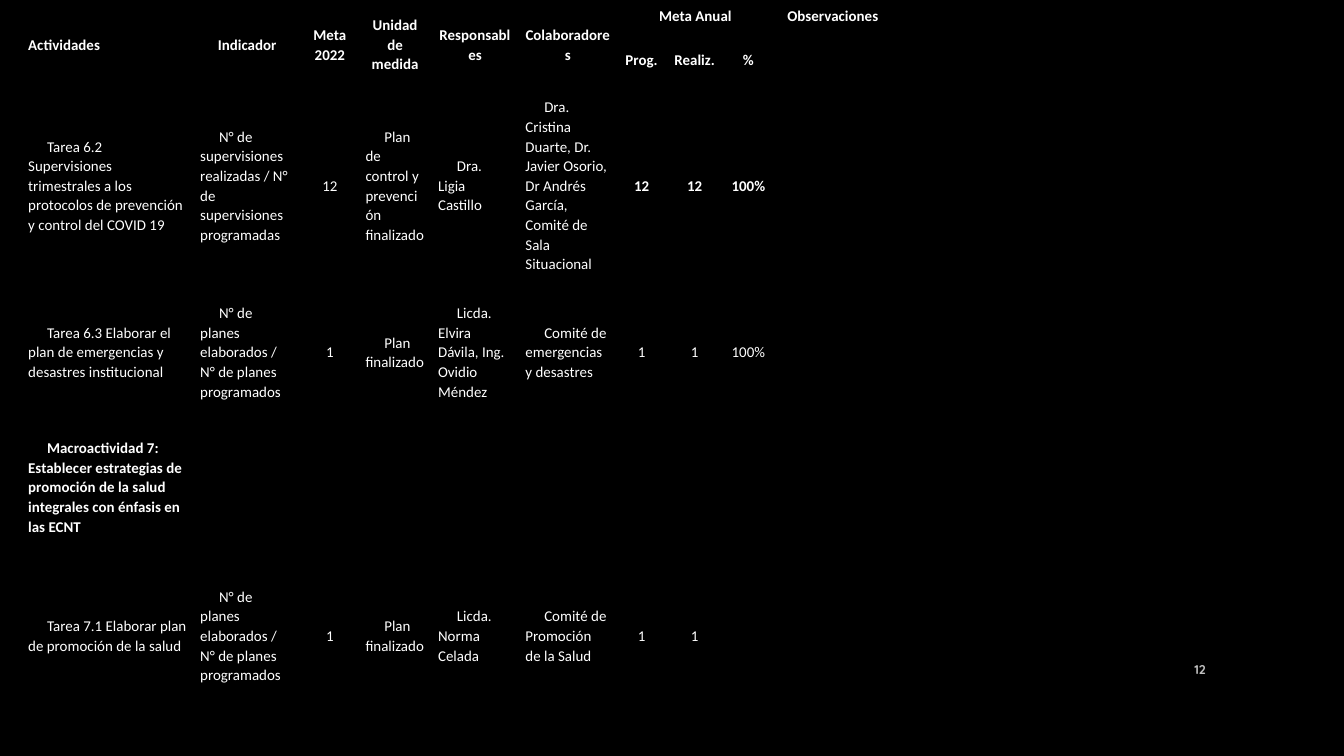
import pptx
import pptx.util
import pptx.dml.color
import pptx.enum.text
import pptx.oxml
import pptx.oxml.ns

Inches = pptx.util.Inches
Pt = pptx.util.Pt
Align = pptx.enum.text.PP_ALIGN
Anchor = pptx.enum.text.MSO_ANCHOR
BLACK = pptx.dml.color.RGBColor(0, 0, 0)
WHITE = pptx.dml.color.RGBColor(255, 255, 255)
GRAY = pptx.dml.color.RGBColor(191, 191, 191)

COLS = [1.28, 0.8, 0.43, 0.54, 0.65, 0.73, 0.37, 0.42, 0.38, 3.09]
ROWS = [0.23, 0.21, 1.44, 1.04, 0.97, 1.24]
PLANS = "N° de planes elaborados / N° de planes programados"
DATA = [
    ["Actividades", "Indicador", "Meta 2022", "Unidad de medida", "Responsables",
     "Colaboradores", "Meta Anual", "", "", "Observaciones"],
    ["", "", "", "", "", "", "Prog.", "Realiz.", "%", ""],
    ["Tarea 6.2 Supervisiones trimestrales a los protocolos de prevención y control del COVID 19",
     "N° de supervisiones realizadas / N° de supervisiones programadas", "12",
     "Plan de control y prevención finalizado", "Dra. Ligia Castillo",
     "Dra. Cristina Duarte, Dr. Javier Osorio, Dr Andrés García, Comité de Sala Situacional",
     "12", "12", "100%", ""],
    ["Tarea 6.3 Elaborar el plan de emergencias y desastres institucional", PLANS, "1",
     "Plan finalizado", "Licda. Elvira Dávila, Ing. Ovidio Méndez",
     "Comité de emergencias y desastres", "1", "1", "100%", ""],
    ["Macroactividad 7: Establecer estrategias de promoción de la salud integrales "
     "con énfasis en las ECNT"] + [""] * 9,
    ["Tarea 7.1 Elaborar plan de promoción de la salud", PLANS, "1", "Plan finalizado",
     "Licda. Norma Celada", "Comité de Promoción de la Salud", "1", "1", "", ""],
]


def style(para, face, size, color, bold):
    """Format every run of a paragraph."""
    for run in para.runs:
        font = run.font
        font.name, font.size, font.bold = face, Pt(size), bold
        font.color.rgb = color


def edge(cell):
    """Clear the fill of a cell and draw its four borders."""
    cell.fill.background()
    props = cell._tc.get_or_add_tcPr()
    for at, side in enumerate("LRTB"):
        props.insert(at, pptx.oxml.parse_xml(
            f'<a:ln{side} {pptx.oxml.ns.nsdecls("a")} w="{Pt(0.75)}"><a:solidFill>'
            f'<a:srgbClr val="{BLACK}"/></a:solidFill></a:ln{side}>'))


def write(cell, text, row, col):
    """Fill one cell with text styled by its place in the grid."""
    cell.text_frame.text = text
    para = cell.text_frame.paragraphs[0]
    bold = row in (0, 1, 4) or (row == 2 and col >= 6)
    style(para, "Calibri", 8, WHITE, bold)
    figure = col == 2 or col >= 6
    if (row < 2 and 0 < col < 9) or (row >= 2 and figure):
        para.alignment = Align.CENTER
    elif row >= 2:
        props = para._p.get_or_add_pPr()
        props.set("marL", "0")
        props.set("indent", str(Inches(0.14)))
    if row > 0 or col < 6:
        cell.vertical_anchor = Anchor.MIDDLE
        cell.margin_left = cell.margin_right = Inches(0.05)
        cell.margin_top = cell.margin_bottom = 0
        para.line_spacing, para.space_after = 1.07, Pt(8)


def add_plan(slide, left, top, width, height):
    """Place the table of activities in the given box."""
    frame = slide.shapes.add_table(len(ROWS), len(COLS), Inches(left), Inches(top),
                                   Inches(width), Inches(height))
    table = frame.table
    table.first_row = table.horz_banding = False
    for col, size in zip(table.columns, COLS):
        col.width = Inches(size)
    for row, size in zip(table.rows, ROWS):
        row.height = Inches(size)
    frame.height = Inches(height)
    for row, line in enumerate(DATA):
        for col, text in enumerate(line):
            cell = table.cell(row, col)
            edge(cell)
            if text:
                write(cell, text, row, col)
    for col in range(6):
        table.cell(0, col).merge(table.cell(1, col))
    table.cell(0, 6).merge(table.cell(0, 8))


def add_number(slide, left, top, width, height):
    """Place the page number in the given box."""
    box = slide.shapes.add_textbox(Inches(left), Inches(top), Inches(width), Inches(height))
    frame = box.text_frame
    frame.word_wrap = True
    frame.vertical_anchor = Anchor.MIDDLE
    frame.text = "12"
    para = frame.paragraphs[0]
    para.alignment = Align.RIGHT
    style(para, "Quicksand", 6.8, GRAY, True)


def main():
    """Build and save the slide."""
    deck = pptx.Presentation()
    deck.slide_width = Inches(10)
    deck.slide_height = deck.slide_width * 9 // 16
    slide = deck.slides.add_slide(deck.slide_layouts[6])
    fill = slide.background.fill
    fill.solid()
    fill.fore_color.rgb = BLACK
    add_number(slide, 8.62, 4.83, 0.45, 0.3)
    add_plan(slide, 0.16, 0, 8.69, 5.16)
    deck.save("out.pptx")


if __name__ == "__main__":
    main()
